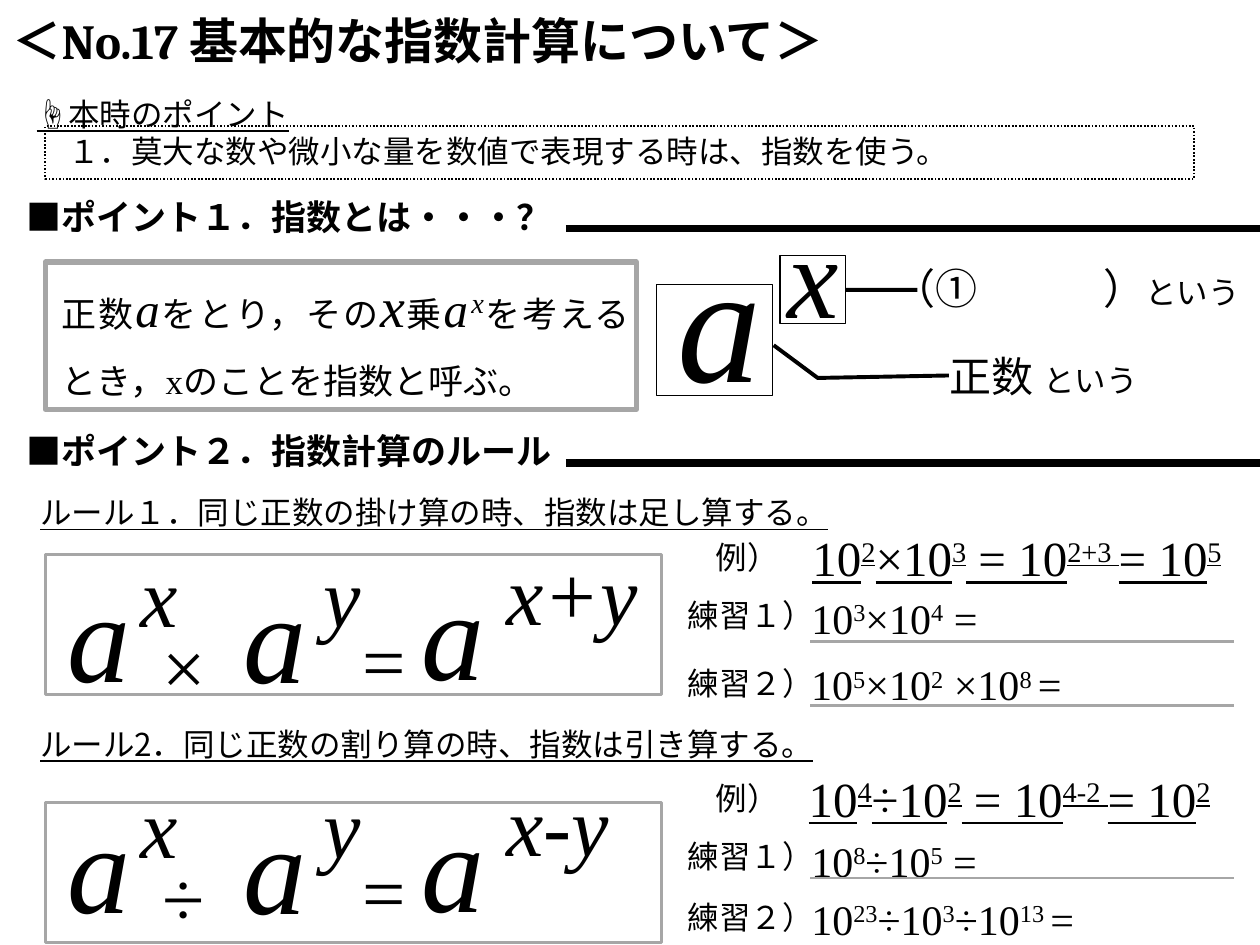
"""Build a worksheet slide about the basic rules of exponents."""
from lxml import etree
from pptx import Presentation
from pptx import util as u
from pptx.dml import color
from pptx.enum import dml, shapes, text
from pptx.oxml import ns

SERIF, SANS, HEADING = "Times New Roman", "Noto Sans CJK JP", "Cambria"
BLACK, GREY = "000000", "A6A6A6"


def rgb(value):
    """Turn a hex string into a colour."""
    return color.RGBColor.from_string(value)


def pts(*values):
    """Turn numbers into lengths in points."""
    return [u.Pt(value) for value in values]


def add_span(para, words, font=SERIF, size=18, bold=False, italic=False,
             underline=False, raised=False):
    """Add one formatted run to a paragraph."""
    span = para.add_run()
    span.text = words
    span.font.name, span.font.size = font, u.Pt(size)
    span.font.bold, span.font.italic = bold, italic
    span.font.underline = underline
    span.font.color.rgb = rgb(BLACK)
    props = span.font._element
    etree.SubElement(props, ns.qn("a:ea")).set("typeface", SANS)
    if raised:
        props.set("baseline", "30000")


def fill_para(para, spans, spacing=None, align=text.PP_ALIGN.LEFT, **style):
    """Write (words, overrides) pairs into a paragraph."""
    para.alignment = align
    para.space_before = u.Pt(0)
    if spacing:
        para.line_spacing = spacing
    for words, extra in spans:
        add_span(para, words, **{**style, **extra})


def set_frame(box, wrap=True):
    """Give a text frame top anchoring and the chosen wrapping."""
    frame = box.text_frame
    frame.word_wrap = wrap
    frame.auto_size = text.MSO_AUTO_SIZE.SHAPE_TO_FIT_TEXT
    frame.vertical_anchor = text.MSO_ANCHOR.TOP
    return frame


def add_text(page, content, place, wrap=False, **style):
    """Add a text box from a string or a list of spans."""
    box = page.shapes.add_textbox(*pts(*place))
    frame = set_frame(box, wrap)
    spans = [(content, {})] if isinstance(content, str) else content
    fill_para(frame.paragraphs[0], spans, **style)
    return box


def add_powers(page, formula, place, **style):
    """Add a formula whose exponents stand between ^ marks."""
    spans = [(part, {"raised": index % 2 == 1})
             for index, part in enumerate(formula.split("^")) if part]
    add_text(page, spans, place, **style)


def add_frame(page, place, ink, width, dash=None):
    """Add an unfilled rectangle."""
    box = page.shapes.add_shape(shapes.MSO_SHAPE.RECTANGLE, *pts(*place))
    box.shadow.inherit = False
    box.fill.background()
    box.line.color.rgb, box.line.width = rgb(ink), u.Pt(width)
    if dash:
        box.line.dash_style = dash
    return box


def add_line(page, left, right, y, ink, width):
    """Add a horizontal line."""
    line = page.shapes.add_connector(
        shapes.MSO_CONNECTOR.STRAIGHT, *pts(left, y, right, y))
    line.line.color.rgb, line.line.width = rgb(ink), u.Pt(width)
    etree.SubElement(line._element.spPr, ns.qn("a:effectLst"))
    return line


def add_heading(page, words, y):
    """Add a section heading with the thick rule beside it."""
    add_text(page, words, (7.9, y, 494.6, 31.7), wrap=True, font=HEADING,
             size=20, bold=True, align=text.PP_ALIGN.JUSTIFY)
    add_line(page, 323.3, 720, y + 22.6, BLACK, 4.5)


def add_lesson(page):
    """Fill the title and the lesson point placeholders."""
    title, body = page.placeholders[0], page.placeholders[1]
    title.left, title.top, title.width, title.height = pts(0, 2.2, 695.5, 41)
    fill_para(set_frame(title).paragraphs[0],
              [("＜No.17 基本的な指数計算について＞", {})], font=HEADING, size=28,
              bold=True, spacing=1.0, align=text.PP_ALIGN.JUSTIFY)
    body.left, body.top, body.width, body.height = pts(13.7, 28.8, 676.8, 72.7)
    frame = set_frame(body)
    points = [("☝本時のポイント", 2.0, True),
              ("　１．莫大な数や微小な量を数値で表現する時は、指数を使う。　", 1.0, False)]
    for index, (words, spacing, underline) in enumerate(points):
        para = frame.add_paragraph() if index else frame.paragraphs[0]
        props = para._p.get_or_add_pPr()
        props.set("marL", "0")
        props.set("indent", "0")
        etree.SubElement(props, ns.qn("a:buNone"))
        fill_para(para, [(words, {})], spacing, font=SANS, underline=underline)
    add_frame(page, (25.9, 72, 656.6, 30.2), BLACK, 1, dml.MSO_LINE.ROUND_DOT)


def add_definition(page):
    """Add the definition and the labelled power."""
    italic = {"size": 28, "italic": True}
    spans = [("正数", {}), ("a", italic), ("をとり，その", {}),
             ("x", {"size": 32, "italic": True}), ("乗", {}), ("a", italic),
             (" ", {"size": 6, "italic": True, "raised": True}),
             ("x", {**italic, "raised": True}),
             ("を考えるとき，xのことを指数と呼ぶ。", {})]
    box = add_text(page, spans, (28.1, 136.1, 339, 92.9), wrap=True, size=20,
                   spacing=1.5, align=text.PP_ALIGN.JUSTIFY)
    box.text_frame.margin_top = box.text_frame.margin_bottom = u.Pt(0)
    add_frame(page, (25.9, 149.8, 337.7, 84.2), GREY, 3)

    add_text(page, "a", (380.2, 118.8, 63.4, 123.8), size=96, italic=True)
    add_text(page, "x", (442.8, 112.3, 43.9, 87.1), size=66, italic=True)
    add_frame(page, (375.1, 162.7, 66.2, 63.4), BLACK, 0.75)
    exponent = add_frame(page, (445.7, 146.2, 37.4, 38.9), BLACK, 0.75)
    add_line(page, 483.1, 524.2, 165.6, BLACK, 2.25).begin_connect(exponent, 3)
    outline = page.shapes.build_freeform(*pts(442.1, 197.3))
    outline.add_line_segments([pts(467.3, 216), pts(542.2, 214.6)], close=False)
    leader = outline.convert_to_shape()
    leader.shadow.inherit = False
    leader.fill.background()
    leader.line.color.rgb, leader.line.width = rgb(BLACK), u.Pt(2.25)
    labels = [("正数 ", (535.7, 196.6, 125.3, 36)),
              ("（①　　　）", (503.3, 146.2, 222.5, 36))]
    for words, place in labels:
        add_text(page, [(words, {"size": 24}), ("という", {})], place, font=SANS)


def add_rule(page, y, frame_y, rule, sign, exponent, exponent_width):
    """Add one calculation rule and its framed formula."""
    add_text(page, rule, (15.8, y - 36, 475.9, 28.8), font=SANS, underline=True)
    for left, shift in ((31.7, 0), (131.8, 0.5), (234, -1)):
        add_text(page, "a", (left, y + shift, 51.1, 94.3), size=72, italic=True)
    exponents = [("x", 73.4, 36, -7.5), ("y", 177.8, 36, -7.3),
                 (exponent, 282.2, exponent_width, -8.6)]
    for words, left, width, shift in exponents:
        add_text(page, words, (left, y + shift, width, 65.5), size=48, italic=True)
    add_text(page, sign, (85.7, y + 35.3, 59, 60.5), size=44)
    add_text(page, "=", (200.2, y + 32, 39.6, 60.5), size=44)
    add_frame(page, (25.9, frame_y, 352.1, 79.9), GREY, 1.5)


def add_exercises(page, example, example_place, label_tops, tasks, lines):
    """Add the worked example, the tasks and their answer lines."""
    lefts = (401.8, 385.9, 385.9)
    for words, left, top in zip(("例）", "練習１）", "練習２）"), lefts, label_tops):
        width = 51.1 if left == lefts[0] else 87.1
        add_text(page, words, (left, top, width, 28.8), font=SANS)
    add_powers(page, example, example_place, size=28, underline=True)
    for formula, top, width in tasks:
        add_powers(page, formula, (456.5, top, width, 36), size=24)
    for y in lines:
        add_line(page, 463, 704.9, y, GREY, 1.5)


def main():
    """Build the slide and save it."""
    deck = Presentation()
    deck.slide_width, deck.slide_height = pts(720, 540)
    page = deck.slides.add_slide(deck.slide_layouts[1])
    add_lesson(page)
    add_heading(page, "■ポイント１．指数とは・・・？", 108)
    add_definition(page)
    add_heading(page, "■ポイント２．指数計算のルール", 242)
    add_rule(page, 314.4, 316.8, "ルール１．同じ正数の掛け算の時、指数は足し算する。",
             "×", "x+y", 90)
    add_exercises(page, "10^2^×10^3^ = 10^2+3 ^= 10^5^", (457.2, 298.1, 271.4, 41),
                  (303.8, 337, 375.8),
                  [("10^3^×10^4^ =", 334.8, 128.9),
                   ("10^5^×10^2^ ×10^8 ^=", 373, 190.1)], (366.5, 403.2))
    add_rule(page, 446.6, 458.6, "ルール2．同じ正数の割り算の時、指数は引き算する。",
             "÷", "x-y", 73.4)
    add_exercises(page, "10^4^÷10^2^ = 10^4-2 ^= 10^2^", (455, 435.6, 267.1, 41),
                  (441.4, 474.5, 509.8),
                  [("10^8^÷10^5^ =", 473.8, 128.9),
                   ("10^23^÷10^3^÷10^13 ^=", 506.9, 200.2)], (501.8,))
    deck.save("out.pptx")


if __name__ == "__main__":
    main()
